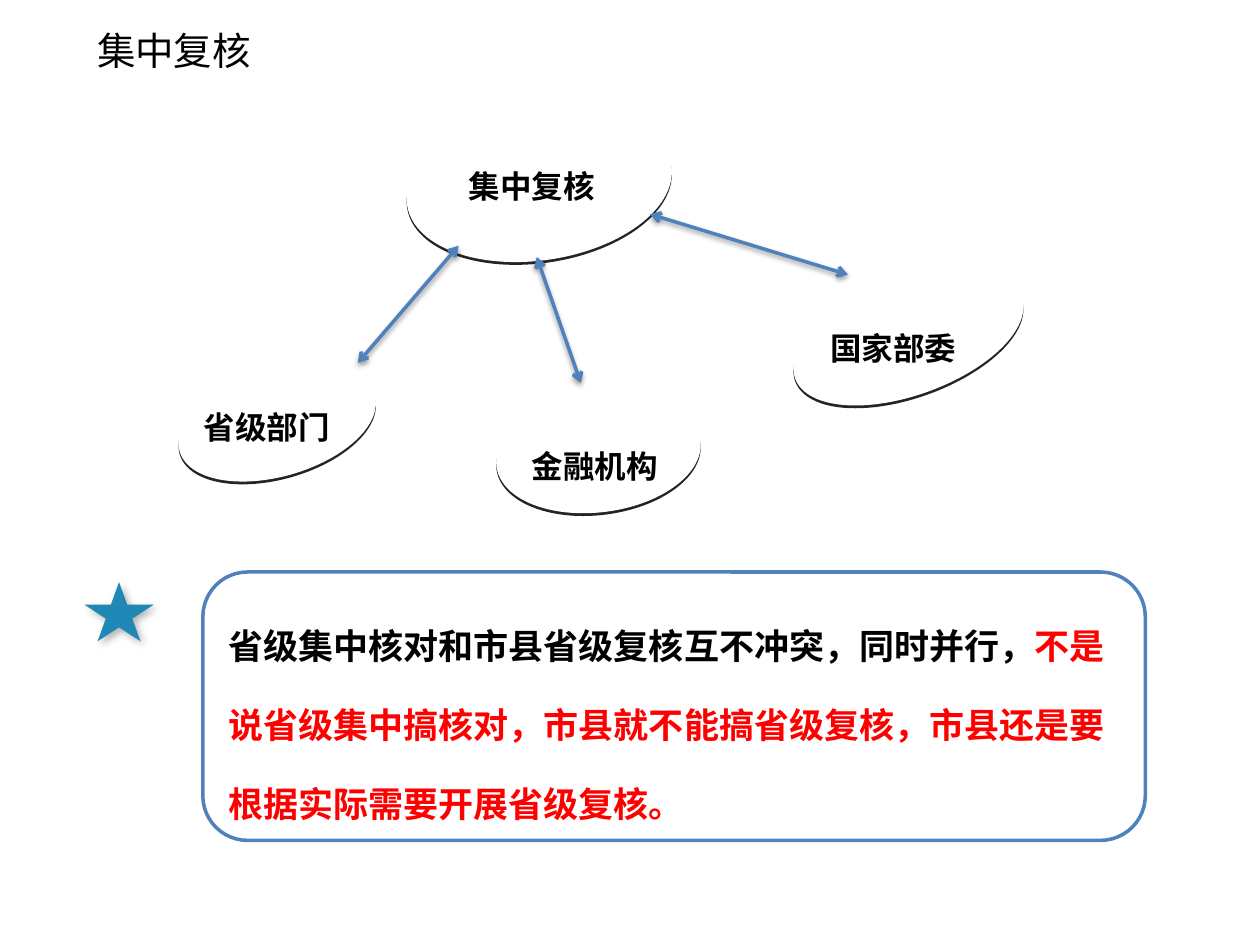
from pptx import Presentation
from pptx.dml.color import RGBColor
from pptx.enum.shapes import MSO_CONNECTOR, MSO_SHAPE
from pptx.enum.text import MSO_ANCHOR, PP_ALIGN
from pptx.oxml import parse_xml
from pptx.oxml.ns import nsdecls, qn
from pptx.util import Inches, Pt

BLACK, WHITE, BLUE, TEAL, RED = "000000", "FFFFFF", "4F81BD", "1F88B7", "FF0000"
TITLE = {"size": Pt(22), "name": "Calibri", "bold": False}
LABEL = {"size": Pt(18), "name": "Noto Sans CJK SC", "bold": True}
BODY = {"size": Pt(20), "name": "Times New Roman", "bold": True}
SOFT = {"alpha": 38, "blur": 3.1, "distance": 1.6, "angle": 90}
EDGE = {"alpha": 85, "blur": 0, "distance": 1.6, "angle": 90}
STAR = {"alpha": 30, "blur": 4.5, "distance": 2.6, "angle": 53}


def color(value):
    """Turn a hex string into a colour."""
    return RGBColor.from_string(value)


class SlideBuilder:
    """Holds the style and the current slide."""

    def __init__(self, deck):
        """Add a title-only slide to the deck."""
        self.slide = deck.slides.add_slide(deck.slide_layouts[5])

    def add_span(self, para, text, style, ink=BLACK):
        """Add a formatted span to a paragraph."""
        span = para.add_run()
        span.text = text
        for key, value in style.items():
            setattr(span.font, key, value)
        span.font.color.rgb = color(ink)

    def shade(self, shape, alpha, blur, distance, angle):
        """Give a shape or connector an outer shadow."""
        properties = shape.element.spPr
        properties.append(parse_xml(
            f'<a:effectLst {nsdecls("a")}><a:outerShdw blurRad="{Pt(blur)}" '
            f'dist="{Pt(distance)}" dir="{angle * 60000}" rotWithShape="0">'
            f'<a:srgbClr val="{BLACK}"><a:alpha val="{alpha * 1000}"/></a:srgbClr>'
            '</a:outerShdw></a:effectLst>'))

    def title(self, text, bounds):
        """Fill and place the title placeholder."""
        box = self.slide.shapes.title
        box.left, box.top, box.width, box.height = map(Inches, bounds)
        box.text_frame.vertical_anchor = MSO_ANCHOR.MIDDLE
        para = box.text_frame.paragraphs[0]
        para.alignment = PP_ALIGN.LEFT
        self.add_span(para, text, TITLE)

    def shape(self, kind, bounds, fill=None, line=None, width=0, shadow=None):
        """Add a preset shape."""
        shape = self.slide.shapes.add_shape(kind, *map(Inches, bounds))
        if fill:
            shape.fill.solid()
            shape.fill.fore_color.rgb = color(fill)
        else:
            shape.fill.background()
        if line:
            shape.line.color.rgb = color(line)
            shape.line.width = Pt(width)
        else:
            shape.line.fill.background()
        if shadow:
            self.shade(shape, **shadow)
        else:
            shape.shadow.inherit = False
        return shape

    def ellipse(self, center, size, tilt):
        """Add a tilted white ellipse around its centre."""
        (x, y), (width, height) = center, size
        bounds = (x - width / 2, y - height / 2, width, height)
        shape = self.shape(MSO_SHAPE.OVAL, bounds, WHITE, WHITE, 3, EDGE)
        shape.rotation = -tilt

    def arrow(self, start, end):
        """Add a double-headed arrow."""
        arrow = self.slide.shapes.add_connector(
            MSO_CONNECTOR.STRAIGHT, *map(Inches, start + end))
        arrow.line.color.rgb = color(BLUE)
        arrow.line.width = Pt(2)
        outline = arrow.element.spPr.find(qn("a:ln"))
        for tag in ("headEnd", "tailEnd"):
            outline.append(parse_xml(f'<a:{tag} {nsdecls("a")} type="arrow"/>'))
        self.shade(arrow, **SOFT)

    def label(self, text, left, top):
        """Add a bold label."""
        box = self.slide.shapes.add_textbox(*map(Inches, (left, top, 2.22, 0.4)))
        box.text_frame.word_wrap = True
        self.add_span(box.text_frame.paragraphs[0], text, LABEL)

    def callout(self, bounds, spans):
        """Add a rounded box with a paragraph of coloured spans."""
        box = self.shape(MSO_SHAPE.ROUNDED_RECTANGLE, bounds, line=BLUE, width=2)
        box.text_frame.word_wrap = True
        box.text_frame.vertical_anchor = MSO_ANCHOR.MIDDLE
        para = box.text_frame.paragraphs[0]
        para.alignment = PP_ALIGN.LEFT
        para.line_spacing = Pt(45)
        for text, ink in spans:
            self.add_span(para, text, BODY, ink)


def main():
    """Build the slide and save it."""
    deck = Presentation()
    deck.slide_width, deck.slide_height = Inches(10), Inches(7.5)
    page = SlideBuilder(deck)
    page.title("集中复核", (0.67, 0.08, 7.67, 0.64))
    page.callout((1.61, 4.54, 7.48, 2.13), [
        ("省级集中核对和市县省级复核互不冲突，同时并行，", BLACK),
        ("不是说省级集中搞核对，市县就不能搞省级复核，市县还是要根据实际需要开展省级复核。", RED),
    ])
    page.shape(MSO_SHAPE.STAR_5_POINT, (0.67, 4.62, 0.55, 0.47), TEAL, shadow=STAR)

    nodes = [
        ("集中复核", (3.62, 1.28), (4.28, 1.47), (2.08, 1.15), 8.6),
        ("省级部门", (1.52, 3.19), (2.2, 3.36), (1.57, 0.8), 16.1),
        ("金融机构", (4.12, 3.5), (4.75, 3.6), (1.59, 0.89), 7.3),
        ("国家部委", (6.49, 2.56), (7.21, 2.68), (1.87, 0.87), 19.8),
    ]
    for _, _, center, size, tilt in nodes:
        page.ellipse(center, size, tilt)
    for start, end in [((3.64, 1.95), (2.84, 2.88)),
                       ((4.26, 2.04), (4.61, 3.04)),
                       ((5.16, 1.7), (6.73, 2.18))]:
        page.arrow(start, end)
    for text, corner, *_ in nodes:
        page.label(text, *corner)
    deck.save("out.pptx")


if __name__ == "__main__":
    main()
